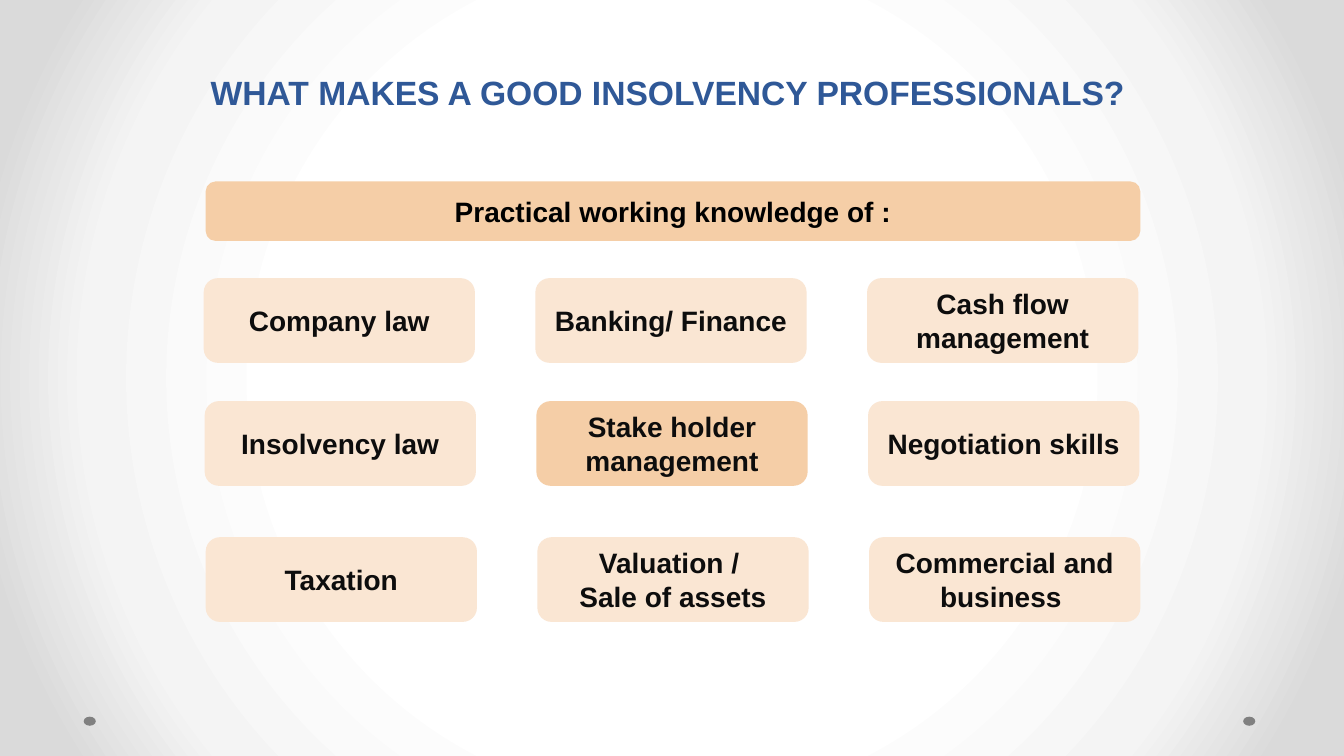
from dataclasses import dataclass

import pptx
import pptx.dml.color
import pptx.enum.shapes
import pptx.enum.text
import pptx.oxml
import pptx.oxml.ns
import pptx.slide
import pptx.util

Inches = pptx.util.Inches
Kind = pptx.enum.shapes.MSO_SHAPE
Anchor = pptx.enum.text.MSO_ANCHOR

COLORS = {
    "title": "2F5897",
    "black": "000000",
    "ink": "0D0D0D",
    "strong": "F5CEA7",
    "pale": "FAE6D3",
    "dot": "808080",
}
GLOW = {50: "FFFFFF", 76: "F4F4F4", 92: "DADADA"}

WIDTH, HEIGHT = 2.69, 0.84
PITCH = 3.29


@dataclass
class Row:
    left: float
    top: float
    skills: tuple[str, ...]


ROWS = [
    Row(2.02, 2.76, ("Company law", "Banking/ Finance", "Cash flow management")),
    Row(2.03, 3.98, ("Insolvency law", "Stake holder management", "Negotiation skills")),
    Row(2.04, 5.33, ("Taxation", "Valuation / \nSale of assets", "Commercial and business ")),
]
CENTRE = "Stake holder management"


def color(name: str) -> pptx.dml.color.RGBColor:
    return pptx.dml.color.RGBColor.from_string(COLORS[name])


def paint_back(slide: pptx.slide.Slide) -> None:
    """Give the slide a round gradient that darkens outwards."""
    slide.background.fill.gradient()
    old = slide.element.find(".//" + pptx.oxml.ns.qn("a:gradFill"))
    stops = "".join(
        f'<a:gs pos="{place * 1000}"><a:srgbClr val="{tone}"/></a:gs>'
        for place, tone in GLOW.items()
    )
    new = pptx.oxml.parse_xml(
        f'<a:gradFill {pptx.oxml.ns.nsdecls("a")} rotWithShape="1">'
        f"<a:gsLst>{stops}</a:gsLst>"
        '<a:path path="circle">'
        '<a:fillToRect l="50000" t="50000" r="50000" b="50000"/>'
        "</a:path></a:gradFill>"
    )
    old.getparent().replace(old, new)


def write(shape, text: str, size: int, ink: str, anchor: Anchor) -> None:
    """Set bold centred text on a shape or text box."""
    frame = shape.text_frame
    frame.text = text
    frame.word_wrap = True
    frame.vertical_anchor = anchor
    for para in frame.paragraphs:
        para.alignment = pptx.enum.text.PP_ALIGN.CENTER
        for run in para.runs:
            run.font.name = "Arial"
            run.font.size = pptx.util.Pt(size)
            run.font.bold = True
            run.font.color.rgb = color(ink)


def add_form(slide: pptx.slide.Slide, kind: Kind, left: float, top: float,
             width: float, height: float, fill: str):
    shape = slide.shapes.add_shape(
        kind, Inches(left), Inches(top), Inches(width), Inches(height))
    shape.shadow.inherit = False
    shape.fill.solid()
    shape.fill.fore_color.rgb = color(fill)
    shape.line.fill.background()
    return shape


def add_title(slide: pptx.slide.Slide) -> None:
    box = slide.shapes.add_textbox(
        Inches(0.67), Inches(0.33), Inches(12), Inches(0.83))
    write(box, "WHAT MAKES A GOOD INSOLVENCY PROFESSIONALS? ", 24, "title", Anchor.BOTTOM)
    box.text_frame.paragraphs[0].line_spacing = pptx.util.Pt(58)


def main() -> None:
    deck = pptx.Presentation()
    deck.slide_width, deck.slide_height = Inches(13.33), Inches(7.5)
    slide = deck.slides.add_slide(deck.slide_layouts[6])
    paint_back(slide)
    for left in (12.33, 0.83):
        add_form(slide, Kind.OVAL, left, 7.11, 0.12, 0.09, "dot")
    add_title(slide)

    banner = add_form(slide, Kind.ROUNDED_RECTANGLE, 2.04, 1.8, 9.27, 0.59, "strong")
    write(banner, "Practical working knowledge of :", 20, "black", Anchor.MIDDLE)
    for row in ROWS:
        for col, skill in enumerate(row.skills):
            fill = "strong" if skill == CENTRE else "pale"
            card = add_form(slide, Kind.ROUNDED_RECTANGLE, row.left + col * PITCH,
                            row.top, WIDTH, HEIGHT, fill)
            write(card, skill, 20, "ink", Anchor.MIDDLE)
    deck.save("out.pptx")


if __name__ == "__main__":
    main()
